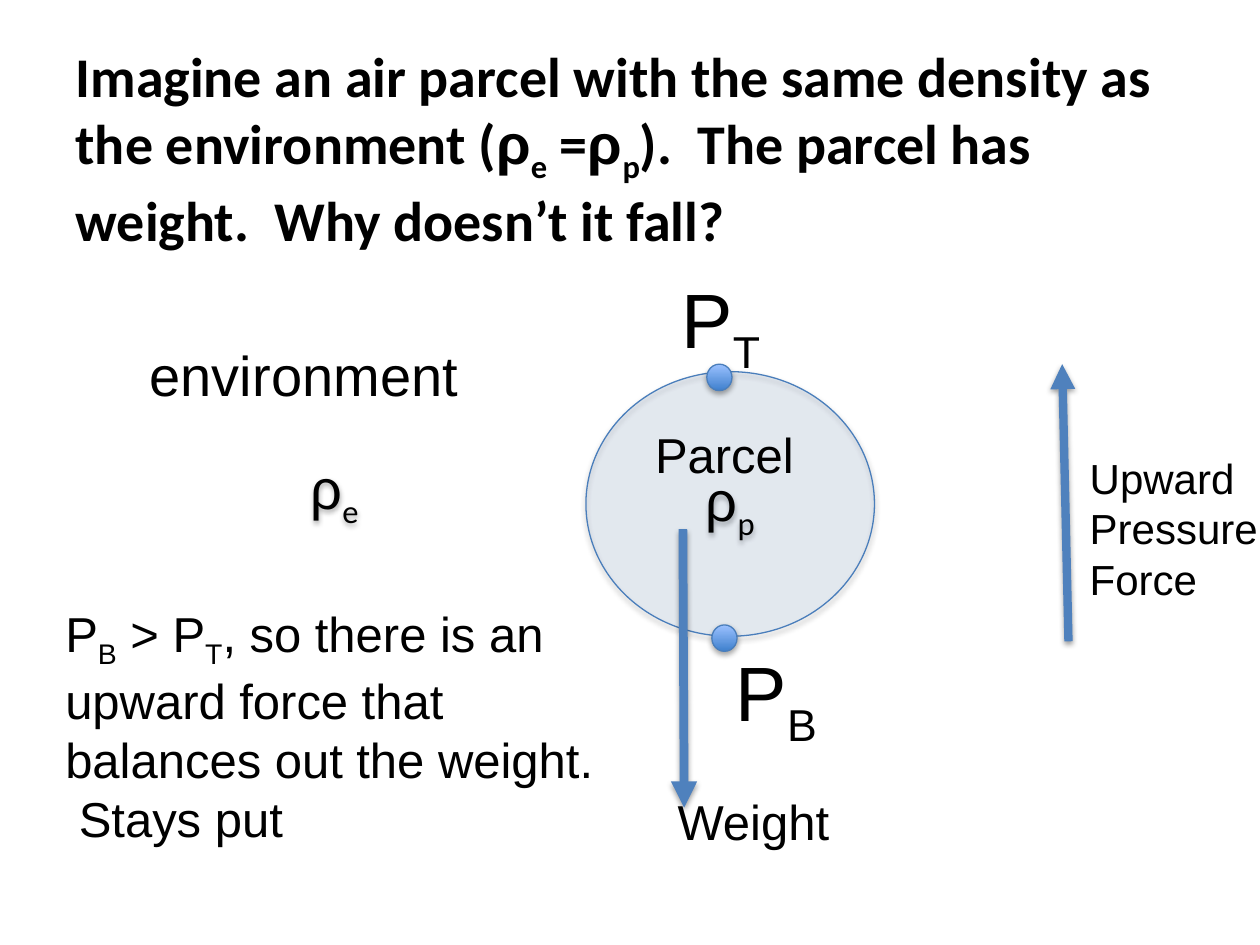
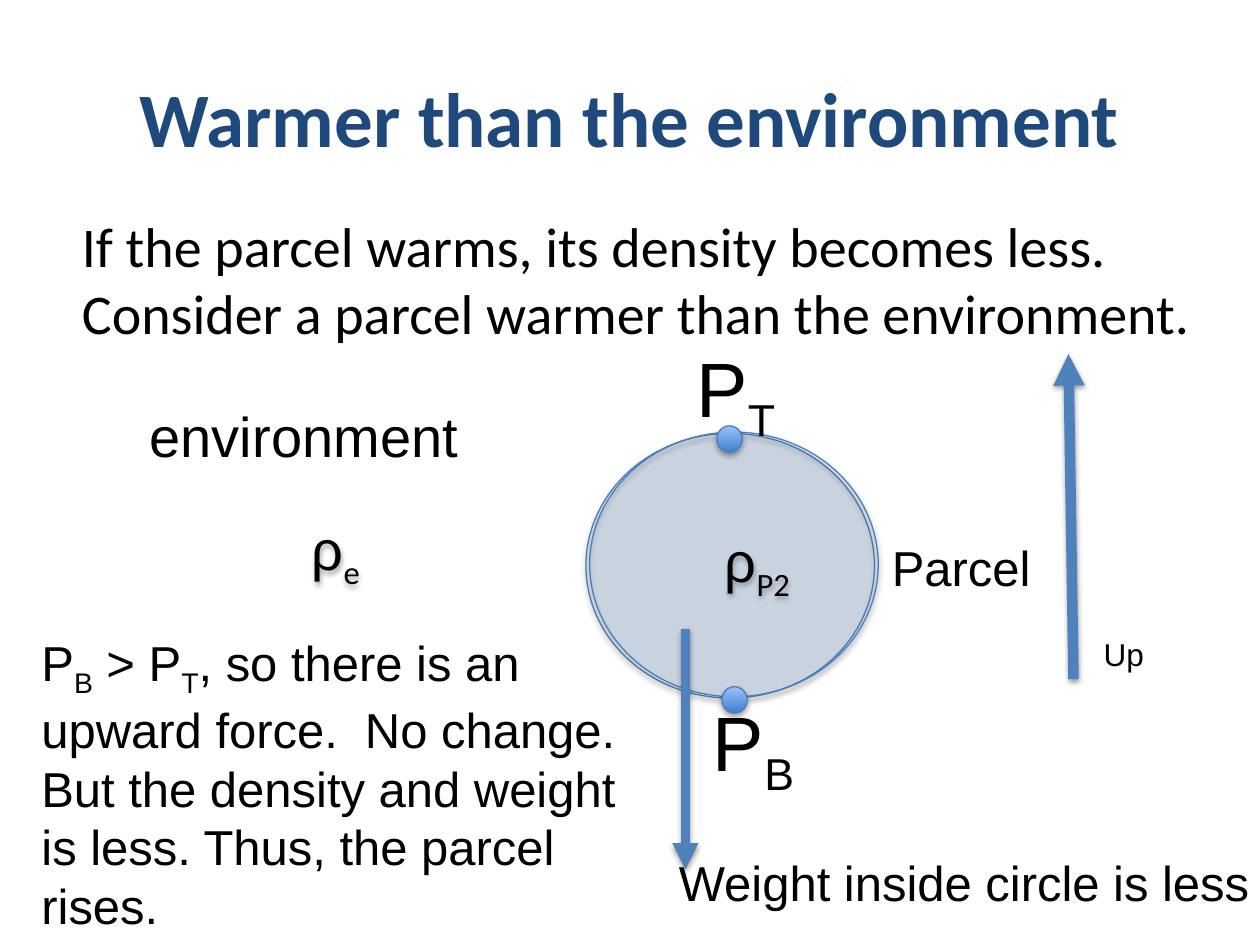
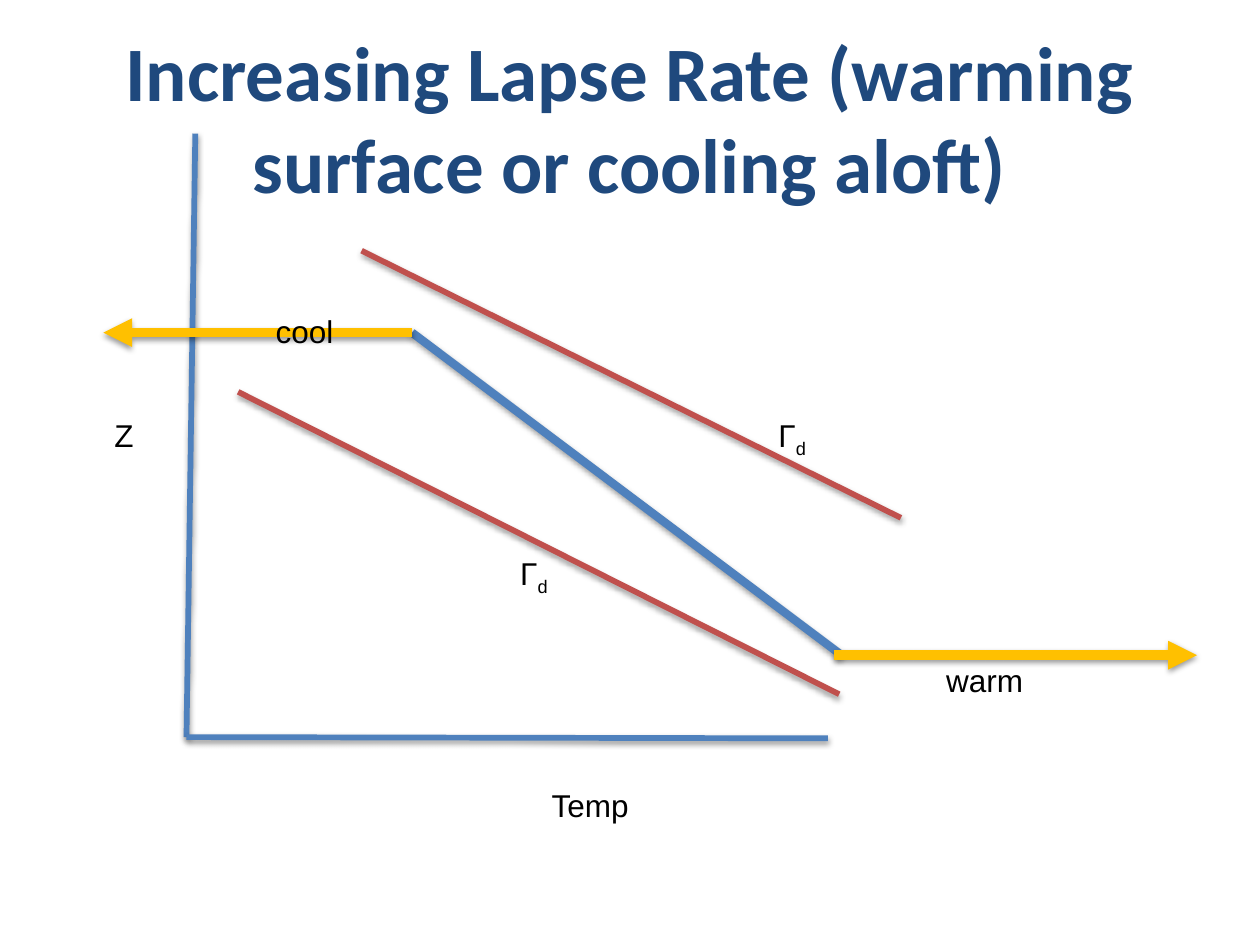
from lxml.etree import SubElement
from pptx import Presentation
from pptx.dml.color import RGBColor
from pptx.enum.shapes import MSO_CONNECTOR as Connector, MSO_SHAPE as Shape
from pptx.enum.text import MSO_AUTO_SIZE as AutoSize
from pptx.oxml.ns import qn
from pptx.util import Inches, Pt

BLACK, NAVY, BLUE, OUTLINE = "000000", "1F497D", "4F81BD", "4A7EBB"
RED, GOLD, DOT_LIGHT, DOT_DARK = "C0504D", "FFC000", "9BC1FF", "3F80CD"
TITLE_BOX = (0.5, 0.3, 9, 1.25)
PARCEL_SIZE = (2.29, 2.1)
DOT_SIZE = (0.2, 0.21)


def color(hex_code):
    return RGBColor.from_string(hex_code)


def write(frame, text, size, font="Arial", bold=False, ink=BLACK, wrap=True):
    """Fill a frame; lines split at newlines, runs at |, subscripts start with _."""
    frame.word_wrap = wrap
    for index, line in enumerate(text.split("\n")):
        paragraph = frame.add_paragraph() if index else frame.paragraphs[0]
        paragraph.space_before = Pt(0)
        paragraph.font.size, paragraph.font.name = Pt(size), font
        paragraph.font.bold, paragraph.font.color.rgb = bold, color(ink)
        for piece in line.split("|"):
            run = paragraph.add_run()
            run.text = piece.removeprefix("_")
            if piece.startswith("_"):
                run._r.get_or_add_rPr().set("baseline", "-25000")
            if piece == "ρ":
                run.font.name = "Arial"


# Titles: text per slide, none on the first
titles = [None, "Warmer than the environment",
          "Increasing Lapse Rate (warming surface or cooling aloft)"]

# Body text: box, bold, text
bodies = [
    ((0.5, 0.28, 9, 4.95), True,
     "Imagine an air parcel with the same density as the environment "
     "(|ρ|_e| =|ρ|_p|).  The parcel has weight.  Why doesn’t it fall?"),
    ((0.55, 1.63, 9.16, 4.95), False,
     "If the parcel warms, its density becomes less. "
     "Consider a parcel warmer than the environment."),
    None,
]

# Parcel diagrams: drop of the whole diagram, left of the upper dot,
# and ellipses as left, top offset, filled, text, extra left margin
diagrams = [
    (0, 5.61, [(4.65, 2.95, True, "ρ|_p", 0),
               (1.51, 2.85, False, "ρ|_e", 0)]),
    (0.49, 5.69, [(4.65, 2.95, True, "", 0),
                  (1.52, 2.85, False, "ρ|_e", 0),
                  (4.68, 2.94, True, "ρ|_P2", 0.37)]),
    None,
]

# Lines: start, end, colour, width, arrowhead
lines = [
    [((8.48, 5.09), (8.43, 2.89), BLUE, 4.75, True),
     ((5.42, 4.2), (5.43, 6.41), BLUE, 5, True)],
    [((8.52, 5.39), (8.48, 2.81), BLUE, 6, True),
     ((5.44, 4.99), (5.44, 6.9), BLUE, 5, True)],
    [((1.55, 1.06), (1.48, 5.85), BLUE, 3.25, False),
     ((6.57, 5.86), (1.48, 5.85), BLUE, 3.25, False),
     ((1.89, 3.11), (6.66, 5.51), RED, 3.25, False),
     ((2.87, 1.99), (7.15, 4.11), RED, 3.25, False),
     ((3.27, 2.64), (6.68, 5.2), BLUE, 4.75, False),
     ((3.27, 2.64), (0.82, 2.64), GOLD, 5.5, True),
     ((6.62, 5.2), (9.5, 5.2), GOLD, 5.5, True)],
]

# Labels: box, size, wrap, text
labels = [
    [((8.55, 3.54, 1.55, 1.31), 24, False, "Upward\nPressure\nForce"),
     ((1.09, 2.65, 2.67, 0.64), 32, False, "environment"),
     ((5.1, 3.32, 1.32, 0.57), 28, False, "Parcel"),
     ((5.31, 2.11, 0.86, 0.84), 44, False, "P|_T"),
     ((5.74, 5.07, 1.48, 0.84), 44, True, "P|_B"),
     ((5.28, 6.23, 1.42, 0.57), 28, False, "Weight"),
     ((0.42, 4.74, 4.4, 1.99), 28, True,
      "P|_B| > P|_T|, so there is an upward force that balances out "
      "the weight.  Stays put")],
    [((8.66, 4.99, 0.52, 0.4), 18, False, "Up"),
     ((1.09, 3.14, 2.67, 0.64), 32, False, "environment"),
     ((6.98, 4.22, 1.32, 0.57), 28, False, "Parcel"),
     ((5.43, 2.65, 0.86, 0.84), 44, False, "P|_T"),
     ((5.56, 5.46, 1.48, 0.84), 44, True, "P|_B"),
     ((5.29, 6.72, 4.78, 0.57), 28, False, "Weight inside circle is less"),
     ((0.23, 4.97, 4.81, 2.46), 28, True,
      "P|_B| > P|_T|, so there is an upward force.  No change.\n"
      "But the density and weight is less. Thus, the parcel rises.")],
    [((4.28, 6.19, 0.82, 0.4), 18, False, "Temp"),
     ((0.81, 3.25, 0.36, 0.4), 18, True, "Z"),
     ((4.03, 4.35, 0.45, 0.4), 18, False, "Γ|_d"),
     ((6.08, 3.25, 0.49, 0.71), 18, True, "Γ|_d"),
     ((2.09, 2.43, 0.66, 0.4), 18, False, "cool"),
     ((7.41, 5.2, 0.82, 0.4), 18, False, "warm")],
]

presentation = Presentation()
presentation.slide_width, presentation.slide_height = Inches(10), Inches(7.5)
content_layout, title_only_layout = (presentation.slide_layouts[i] for i in (1, 5))

for title, body, diagram, slide_lines, slide_labels in zip(
        titles, bodies, diagrams, lines, labels):
    slide = presentation.slides.add_slide(content_layout if body else title_only_layout)
    shapes = slide.shapes

    # Title
    heading = shapes.title
    if title:
        heading.left, heading.top, heading.width, heading.height = map(Inches, TITLE_BOX)
        write(heading.text_frame, title, 44, "Calibri", True, NAVY)
    else:
        heading._element.getparent().remove(heading._element)

    # Body text without bullets
    if body:
        box, bold, text = body
        holder = slide.placeholders[1]
        holder.left, holder.top, holder.width, holder.height = map(Inches, box)
        properties = holder.text_frame.paragraphs[0]._p.get_or_add_pPr()
        properties.set("marL", "0")
        properties.set("indent", "0")
        SubElement(properties, qn("a:buNone"))
        write(holder.text_frame, text, 32, "Calibri", bold)

    # Air parcel and environment, with the theme's soft shadow
    if diagram:
        drop, dot_left, ellipses = diagram
        for left, top, filled, text, extra_margin in ellipses:
            ellipse = shapes.add_shape(
                Shape.OVAL, *map(Inches, (left, top + drop, *PARCEL_SIZE)))
            if filled:
                ellipse.fill.solid()
                ellipse.fill.fore_color.rgb = color(BLUE)
                fill_color = ellipse._element.spPr.find(".//" + qn("a:srgbClr"))
                SubElement(fill_color, qn("a:alpha"), val="11000")
                ellipse.line.color.rgb = color(OUTLINE)
                ellipse.line.width = Pt(0.75)
            else:
                ellipse.fill.background()
                ellipse.line.fill.background()
            if text:
                ellipse.text_frame.margin_left = Inches(0.1 + extra_margin)
                write(ellipse.text_frame, text, 32, "Calibri")

    # Lines and arrows
    for start, end, ink, width, arrow in slide_lines:
        connector = shapes.add_connector(Connector.STRAIGHT, *map(Inches, start + end))
        connector.line.color.rgb = color(ink)
        connector.line.width = Pt(width)
        if arrow:
            SubElement(connector.line._get_or_add_ln(), qn("a:tailEnd"), type="triangle")

    # Labels
    for box, size, wrap, text in slide_labels:
        label = shapes.add_textbox(*map(Inches, box))
        write(label.text_frame, text, size, wrap=wrap)
        label.text_frame.auto_size = AutoSize.SHAPE_TO_FIT_TEXT

    # Pressure points at the top and bottom of the parcel
    if diagram:
        for left, top in ((dot_left, 2.89), (dot_left + 0.04, 4.96)):
            dot = shapes.add_shape(Shape.OVAL, *map(Inches, (left, top + drop, *DOT_SIZE)))
            dot.fill.gradient()
            dot.fill.gradient_angle = 270
            for stop, ink in zip(dot.fill.gradient_stops, (DOT_LIGHT, DOT_DARK)):
                stop.color.rgb = color(ink)
            dot.line.color.rgb = color(OUTLINE)
            dot.line.width = Pt(0.75)

presentation.save("out.pptx")
